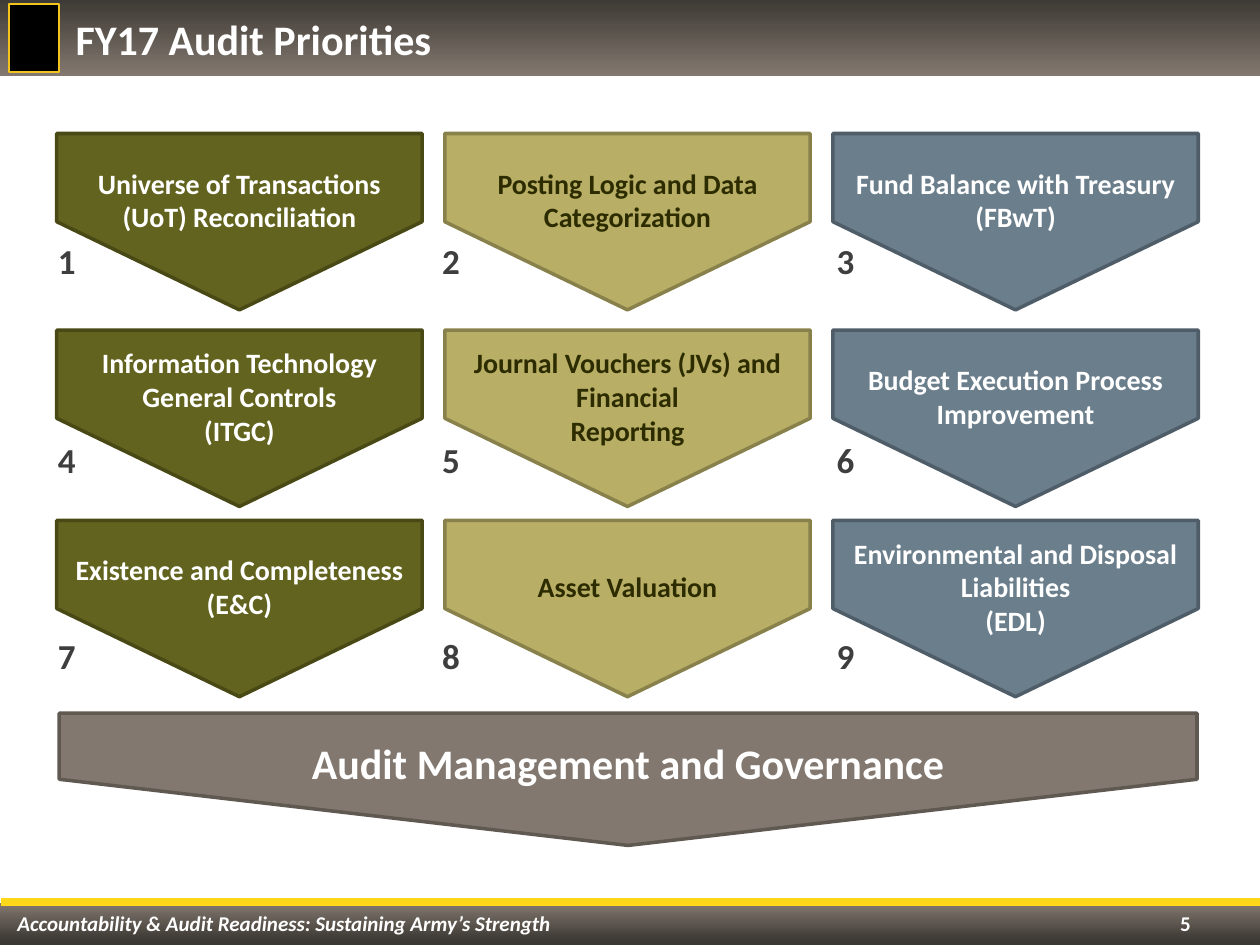
from lxml import etree
from pptx import Presentation
from pptx.dml.color import RGBColor
from pptx.enum.shapes import MSO_CONNECTOR, MSO_SHAPE
from pptx.enum.text import MSO_ANCHOR, PP_ALIGN
from pptx.oxml.ns import qn
from pptx.util import Inches, Pt

LEFT, CENTER, RIGHT = PP_ALIGN.LEFT, PP_ALIGN.CENTER, PP_ALIGN.RIGHT
TOP, MIDDLE = MSO_ANCHOR.TOP, MSO_ANCHOR.MIDDLE
RECTANGLE, PENTAGON = MSO_SHAPE.RECTANGLE, MSO_SHAPE.PENTAGON
STRAIGHT = MSO_CONNECTOR.STRAIGHT

WHITE = RGBColor(0xFF, 0xFF, 0xFF)
BLACK = RGBColor(0x00, 0x00, 0x00)
CHARCOAL = RGBColor(0x3C, 0x38, 0x33)
TAUPE = RGBColor(0x82, 0x78, 0x6F)
TAUPE_EDGE = RGBColor(0x60, 0x59, 0x52)
YELLOW = RGBColor(0xFF, 0xD9, 0x19)
GOLD = RGBColor(0xF3, 0xC4, 0x1C)
NUMBER_GREY = RGBColor(0x3E, 0x3E, 0x3E)
OLIVE = RGBColor(0x62, 0x63, 0x1E)
OLIVE_EDGE = RGBColor(0x49, 0x49, 0x16)
SAND = RGBColor(0xB8, 0xAE, 0x65)
SAND_EDGE = RGBColor(0x88, 0x81, 0x4B)
SAND_TEXT = RGBColor(0x2C, 0x2C, 0x00)
SLATE = RGBColor(0x6B, 0x7E, 0x8C)
SLATE_EDGE = RGBColor(0x4F, 0x5D, 0x68)

COLUMN_COLORS = [
    (OLIVE, OLIVE_EDGE, WHITE),
    (SAND, SAND_EDGE, SAND_TEXT),
    (SLATE, SLATE_EDGE, WHITE),
]
PRIORITIES = [
    [["Universe of Transactions (UoT) Reconciliation"],
     ["Posting Logic and Data Categorization"],
     ["Fund Balance with Treasury (FBwT)"]],
    [["Information Technology General Controls", "(ITGC)"],
     ["Journal Vouchers (JVs) and", "Financial", "Reporting"],
     ["Budget Execution Process Improvement"]],
    [["Existence and Completeness", "(E&C)"],
     ["Asset Valuation"],
     ["Environmental and Disposal Liabilities", "(EDL)"]],
]
ARROW_LEFT, ARROW_PITCH = 0.45, 3.08
ARROW_WIDTH, ARROW_HEIGHT = 2.9, 1.4
ARROW_TOPS = [1.06, 2.62, 4.13]
NUMBER_LEFTS = [-0.01, 3.04, 6.17]
NUMBER_TOPS = [1.85, 3.43, 4.99]


class SlideBuilder:
    def __init__(self, slide, font_name="Calibri"):
        self.slide = slide
        self.font_name = font_name

    def fill_text(self, frame, lines, size, color, align=LEFT, anchor=TOP, italic=False):
        frame.word_wrap = True
        frame.vertical_anchor = anchor
        font_format = {"name": self.font_name, "size": Pt(size),
                       "bold": True, "italic": italic}
        for index, line in enumerate(lines):
            paragraph = frame.paragraphs[0] if index == 0 else frame.add_paragraph()
            paragraph.alignment = align
            run = paragraph.add_run()
            run.text = line
            for attribute, value in font_format.items():
                setattr(run.font, attribute, value)
            run.font.color.rgb = color

    def shape(self, kind, left, top, width, height):
        shape = self.slide.shapes.add_shape(
            kind, Inches(left), Inches(top), Inches(width), Inches(height))
        shape.shadow.inherit = False
        return shape

    def solid(self, shape, fill, edge, edge_width):
        shape.fill.solid()
        shape.fill.fore_color.rgb = fill
        shape.line.color.rgb = edge
        shape.line.width = Pt(edge_width)

    def gradient_band(self, top, height, stops):
        band = self.shape(RECTANGLE, 0, top, 10, height)
        band.line.fill.background()
        band.fill.gradient()
        band.fill.gradient_angle = 270
        for stop, (position, color) in zip(band.fill.gradient_stops, stops):
            stop.position = position
            stop.color.rgb = color

    def down_arrow(self, left, top, width, height, lines, colors, size):
        """Turn a pentagon to point down inside the given visible box."""
        fill, edge, text_color = colors
        arrow = self.shape(PENTAGON, left + (width - height) / 2,
                           top + (height - width) / 2, height, width)
        arrow.rotation = 90
        self.solid(arrow, fill, edge, 2)
        self.fill_text(arrow.text_frame, lines, size, text_color, CENTER, MIDDLE)
        # Counter the shape's rotation so the text reads horizontally.
        arrow.text_frame._txBody.bodyPr.set("vert", "vert270")

    def label(self, left, top, width, height, text, size, color, **text_format):
        box = self.slide.shapes.add_textbox(
            Inches(left), Inches(top), Inches(width), Inches(height))
        self.fill_text(box.text_frame, [text], size, color, **text_format)

    def rule(self, left, right, y, color, width):
        line = self.slide.shapes.add_connector(
            STRAIGHT, Inches(left), Inches(y), Inches(right), Inches(y))
        line.line.color.rgb = color
        line.line.width = Pt(width)
        etree.SubElement(line._element.spPr, qn("a:effectLst"))

    def emblem(self, left, top, width, height):
        self.solid(self.shape(RECTANGLE, left, top, width, height), BLACK, GOLD, 1)

    def title(self, text):
        title = self.slide.shapes.title
        position = {"left": 0.5, "top": 0.08, "width": 9.25, "height": 0.45}
        for attribute, value in position.items():
            setattr(title, attribute, Inches(value))
        self.fill_text(title.text_frame, [text], 24, WHITE, LEFT, MIDDLE)
        # Bring the title in front of the header band.
        self.slide.shapes._spTree.append(title._element)


def main():
    deck = Presentation()
    deck.slide_width, deck.slide_height = Inches(10), Inches(7.5)
    builder = SlideBuilder(deck.slides.add_slide(deck.slide_layouts[5]))

    builder.gradient_band(7.17, 0.33, [(0, TAUPE), (0.9, CHARCOAL)])
    builder.label(0.04, 7.18, 5.29, 0.3,
                  "Accountability & Audit Readiness: Sustaining Army’s Strength",
                  12, WHITE, italic=True)
    builder.rule(0.01, 10.01, 7.16, YELLOW, 4.5)

    for row, priorities in enumerate(PRIORITIES):
        for column, lines in enumerate(priorities):
            builder.down_arrow(ARROW_LEFT + column * ARROW_PITCH, ARROW_TOPS[row],
                               ARROW_WIDTH, ARROW_HEIGHT, lines,
                               COLUMN_COLORS[column], 16)
            number = row * len(priorities) + column + 1
            builder.label(NUMBER_LEFTS[column], NUMBER_TOPS[row], 1.08, 0.44,
                          str(number), 20, NUMBER_GREY, align=CENTER)
    builder.down_arrow(0.47, 5.66, 9.03, 1.05, ["Audit Management and Governance"],
                       (TAUPE, TAUPE_EDGE, WHITE), 24)

    builder.gradient_band(-0.02, 0.62, [(0, CHARCOAL), (1, TAUPE)])
    builder.emblem(0.07, 0.03, 0.4, 0.54)
    builder.title("FY17 Audit Priorities")
    builder.label(8.72, 7.18, 0.83, 0.3, "5", 12, WHITE, align=RIGHT, anchor=MIDDLE)

    deck.save("out.pptx")


if __name__ == "__main__":
    main()
